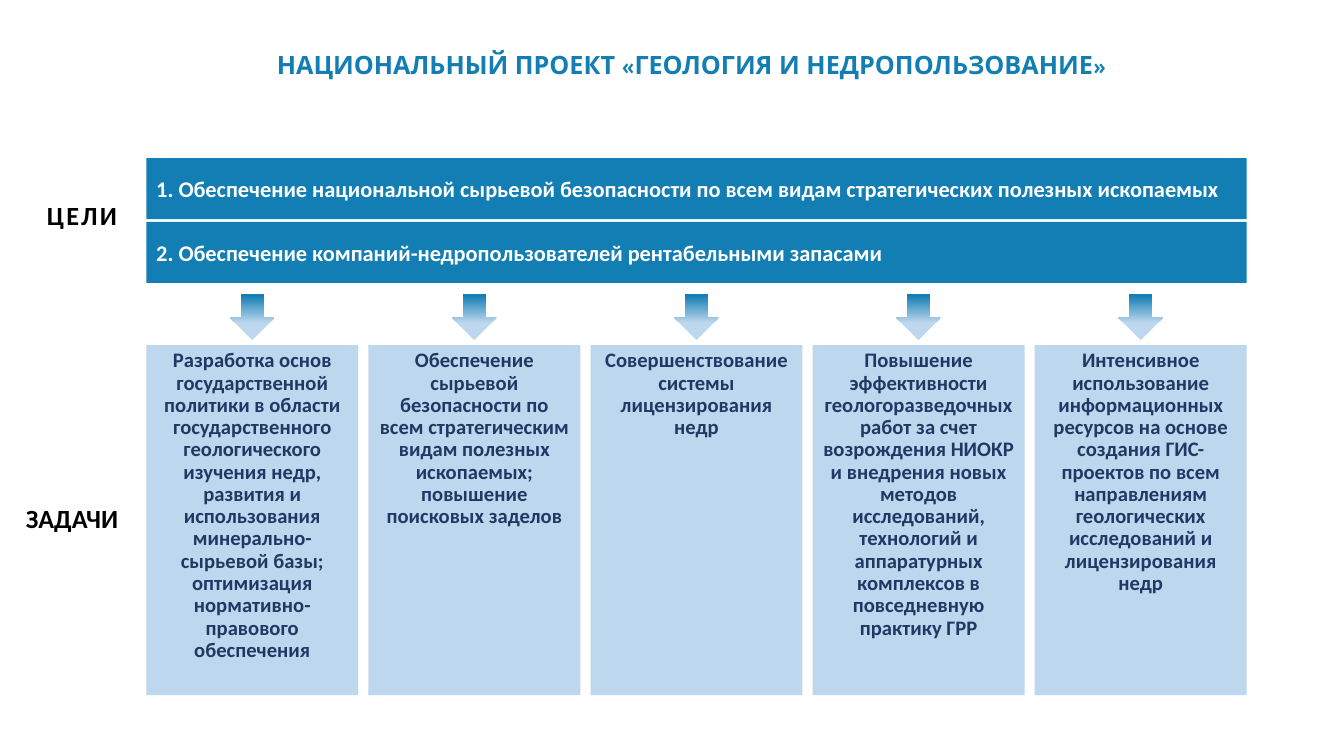
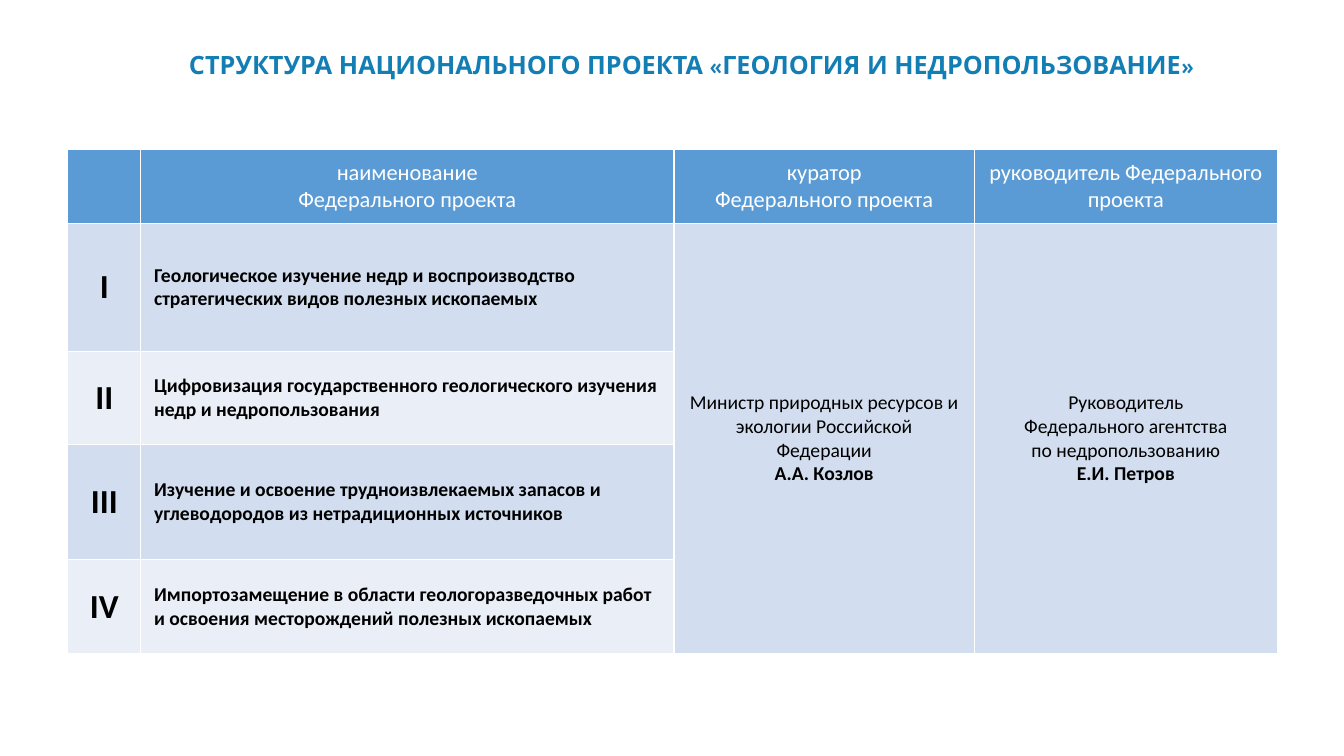
import pptx
import pptx.util
import pptx.dml.color
import pptx.enum.shapes
import pptx.enum.text

Pt = pptx.util.Pt
SHAPE = pptx.enum.shapes.MSO_SHAPE
ALIGN = pptx.enum.text.PP_ALIGN
ANCHOR = pptx.enum.text.MSO_ANCHOR
COLORS = {name: pptx.dml.color.RGBColor.from_string(value) for name, value in {
    "blue": "137EB4", "pale": "BDD7EE", "navy": "203864", "white": "FFFFFF",
    "black": "000000", "header": "5B9BD5", "odd": "D2DEEF", "even": "EAEFF7",
}.items()}

deck = pptx.Presentation()
deck.slide_width, deck.slide_height = Pt(960), Pt(540)


def add_box(slide, kind, left, top, width, height, color):
    box = slide.shapes.add_shape(kind, Pt(left), Pt(top), Pt(width), Pt(height))
    box.shadow.inherit = False
    box.line.fill.background()
    box.fill.solid()
    box.fill.fore_color.rgb = COLORS[color]
    return box


def write(holder, lines, size, color, bold=True, align=ALIGN.CENTER, font="Calibri"):
    """Fill a shape or a table cell with one paragraph per line."""
    frame = holder.text_frame
    frame.word_wrap = True
    frame.text = "\n".join(lines)
    for paragraph in frame.paragraphs:
        paragraph.alignment = align
        paragraph.font.size = Pt(size)
        paragraph.font.name = font
        paragraph.font.bold = bold
        paragraph.font.color.rgb = COLORS[color]
    return frame


# Slides with their titles
slides = []
for heading in ("НАЦИОНАЛЬНЫЙ ПРОЕКТ «ГЕОЛОГИЯ И НЕДРОПОЛЬЗОВАНИЕ»",
                "СТРУКТУРА НАЦИОНАЛЬНОГО ПРОЕКТА «ГЕОЛОГИЯ И НЕДРОПОЛЬЗОВАНИЕ»"):
    slide = deck.slides.add_slide(deck.slide_layouts[6])
    title = add_box(slide, SHAPE.ROUNDED_RECTANGLE, 101, 27, 786, 38, "white")
    title.adjustments[0] = 0.31
    write(title, [heading], 18, "blue", font="League Spartan")
    title.text_frame.vertical_anchor = ANCHOR.MIDDLE
    slides.append(slide)
goals_slide, structure_slide = slides

# Row labels
for label, left, top, width, spacing in (("ЦЕЛИ", 26.5, 138.5, 78, 160),
                                         ("ЗАДАЧИ", 11.5, 355.5, 89, 0)):
    caption = goals_slide.shapes.add_textbox(Pt(left), Pt(top), Pt(width), Pt(30))
    frame = write(caption, [label], 18.7, "black", align=ALIGN.LEFT)
    if spacing:
        frame.paragraphs[0].runs[0].font._element.set("spc", str(spacing))

# Goals
BODY_LEFT, BODY_WIDTH = 104.5, 786
goals = [
    "1. Обеспечение национальной сырьевой безопасности по всем видам стратегических полезных ископаемых",
    "2. Обеспечение компаний-недропользователей рентабельными запасами",
]
for index, goal in enumerate(goals):
    bar = add_box(goals_slide, SHAPE.RECTANGLE, BODY_LEFT, 113 + index * 45.5,
                  BODY_WIDTH, 43.5, "blue")
    write(bar, [goal], 16, "white", align=ALIGN.LEFT)
    bar.text_frame.vertical_anchor = ANCHOR.MIDDLE

# Tasks, each under its arrow
tasks = [
    "Разработка основ государственной политики в области государственного геологического изучения недр, "
    "развития и использования минерально-сырьевой базы; оптимизация нормативно-правового обеспечения",
    "Обеспечение сырьевой безопасности по всем стратегическим видам полезных ископаемых; "
    "повышение поисковых заделов",
    "Совершенствование системы лицензирования недр",
    "Повышение эффективности геологоразведочных работ за счет возрождения НИОКР и внедрения новых методов "
    "исследований, технологий и аппаратурных комплексов в повседневную практику ГРР",
    "Интенсивное использование информационных ресурсов на основе создания ГИС-проектов по всем направлениям "
    "геологических исследований и лицензирования недр",
]
TASK_WIDTH, ARROW_WIDTH = 151.4, 32
task_step = (BODY_WIDTH - TASK_WIDTH) / (len(tasks) - 1)
for index, task in enumerate(tasks):
    left = BODY_LEFT + index * task_step
    card = add_box(goals_slide, SHAPE.RECTANGLE, left, 246.5, TASK_WIDTH, 250, "pale")
    frame = write(card, [task], 14.7, "navy")
    frame.vertical_anchor = ANCHOR.TOP
    frame.paragraphs[0].line_spacing = 0.9

    arrow = add_box(goals_slide, SHAPE.DOWN_ARROW, left + (TASK_WIDTH - ARROW_WIDTH) / 2,
                    210, ARROW_WIDTH, 33, "pale")
    arrow.fill.gradient()
    arrow.fill.gradient_angle = 90
    for stop, (position, color) in zip(arrow.fill.gradient_stops,
                                       ((0.37, "pale"), (0.97, "blue"))):
        stop.position = position
        stop.color.rgb = COLORS[color]

# Structure table
column_widths = [52, 381, 214.5, 216.5]
row_heights = [53, 91.5, 66.5, 82.5, 67]
table = structure_slide.shapes.add_table(
    len(row_heights), len(column_widths), Pt(48.5), Pt(106.5),
    Pt(sum(column_widths)), Pt(sum(row_heights))).table
for column, width in zip(table.columns, column_widths):
    column.width = Pt(width)
for row, height in zip(table.rows, row_heights):
    row.height = Pt(height)
for row_index, row in enumerate(table.rows):
    for column_index, cell in enumerate(row.cells):
        banded = row_index % 2 == 0 and column_index < 2
        cell.fill.solid()
        cell.fill.fore_color.rgb = COLORS[
            "header" if row_index == 0 else "even" if banded else "odd"]
        cell.vertical_anchor = ANCHOR.MIDDLE
        cell.margin_left = cell.margin_right = Pt(9.6)
        cell.margin_top = cell.margin_bottom = Pt(4.8)

# Table header
headers = [["наименование", "Федерального проекта"], ["куратор", "Федерального проекта"],
           ["руководитель Федерального проекта"]]
for column_index, header in enumerate(headers, 1):
    write(table.cell(0, column_index), header, 16, "white", bold=False)

# Federal projects
projects = [
    ("I", "Геологическое изучение недр и воспроизводство стратегических видов полезных ископаемых"),
    ("II", "Цифровизация государственного геологического изучения недр и недропользования"),
    ("III", "Изучение и освоение трудноизвлекаемых запасов и углеводородов из нетрадиционных источников"),
    ("IV", "Импортозамещение в области геологоразведочных работ и освоения месторождений полезных ископаемых"),
]
for row_index, (number, project) in enumerate(projects, 1):
    write(table.cell(row_index, 0), [number], 24, "black")
    write(table.cell(row_index, 1), [project], 14, "black", align=ALIGN.LEFT)

# Officials, in cells that span all projects
officials = [
    ["Министр природных ресурсов и экологии Российской Федерации", "А.А. Козлов"],
    ["Руководитель", "Федерального агентства", "по недропользованию", "Е.И. Петров"],
]
for column_index, official in enumerate(officials, 2):
    cell = table.cell(1, column_index)
    cell.merge(table.cell(len(projects), column_index))
    frame = write(cell, official, 14, "black", bold=False)
    frame.paragraphs[-1].font.bold = True

deck.save("out.pptx")
